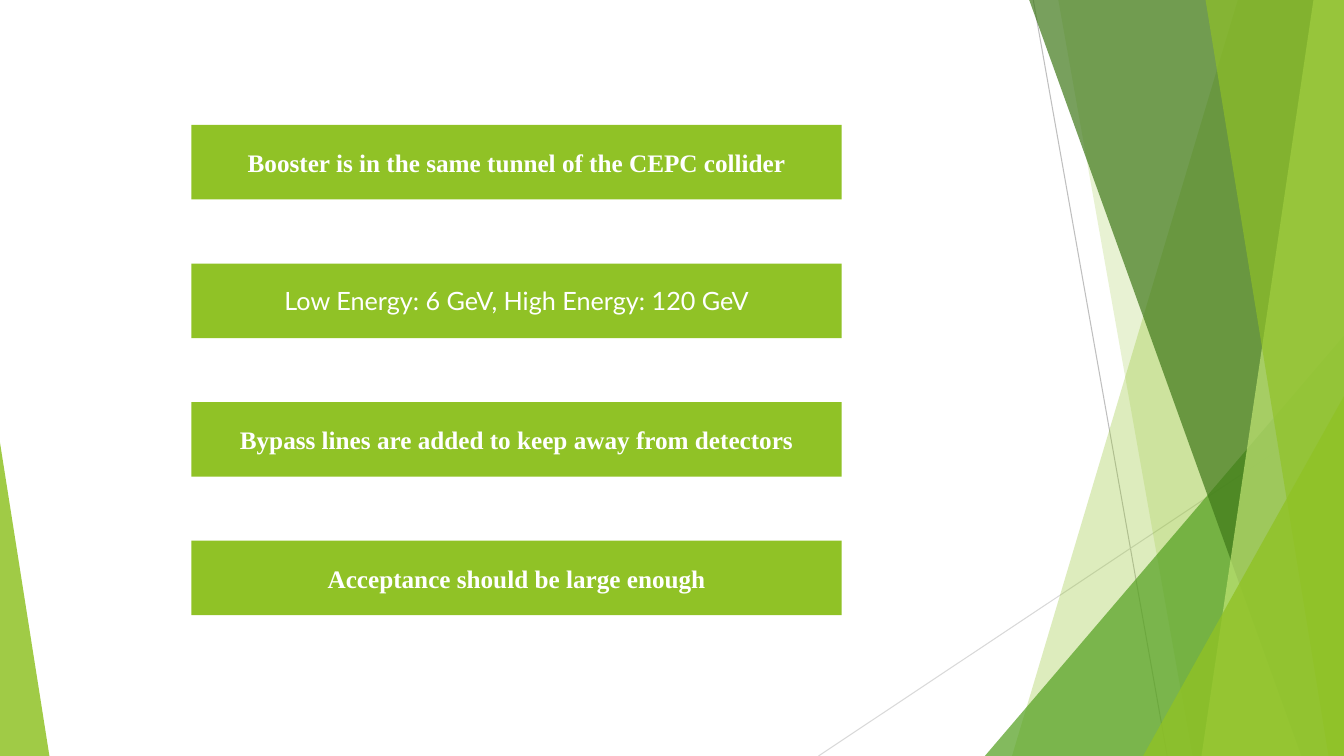
from dataclasses import dataclass

from lxml import etree
from pptx import Presentation
from pptx.dml.color import RGBColor
from pptx.enum.shapes import MSO_CONNECTOR, MSO_SHAPE
from pptx.enum.text import MSO_ANCHOR, PP_ALIGN
from pptx.oxml.ns import qn
from pptx.shapes.autoshape import Shape
from pptx.util import Inches, Pt

RECT, WEDGE = MSO_SHAPE.RECTANGLE, MSO_SHAPE.ISOSCELES_TRIANGLE
STRAIGHT = MSO_CONNECTOR.STRAIGHT
MIDDLE, CENTER = MSO_ANCHOR.MIDDLE, PP_ALIGN.CENTER

WIDE, HIGH = Inches(13.333), Inches(7.5)
COLORS = {
    "lime": "90C226", "green": "54A021", "dark": "3F7819", "pale": "C0E474",
    "gray": "BFBFBF", "mist": "D9D9D9", "white": "FFFFFF",
}
SERIF = {"name": "Times New Roman", "size": Pt(18), "bold": True}
SANS = {"name": "Lato", "size": Pt(18), "bold": False}

# Bar stack, in percent of the slide
BAR_LEFT, BAR_TOP, BAR_WIDE, BAR_HIGH, BAR_STEP = 14.25, 16.53, 48.38, 9.87, 18.33


# All lengths below are percent of the slide's width or height
@dataclass(frozen=True)
class Ray:
    start: tuple[float, float]
    end: tuple[float, float]
    color: str


@dataclass(frozen=True)
class Band:
    """Facet from a slanted left edge to the right side of the slide."""
    head: float
    foot: float
    color: str
    alpha: int


@dataclass(frozen=True)
class Peak:
    """Right triangle that stands on the bottom of the slide."""
    left: float
    top: float
    width: float
    tip: int
    color: str
    alpha: int


@dataclass(frozen=True)
class Bar:
    text: str
    font: dict


RAYS = [
    Ray((76.88, 0), (86.85, 100), "gray"),
    Ray((100, 53.73), (60.9, 100), "mist"),
]
FACETS = [
    Band(92.1, 75.3, "lime", 30),
    Band(78.75, 88.73, "lime", 20),
    Peak(73.28, 44.4, 26.72, 1, "green", 72),
    Band(76.58, 96.83, "dark", 70),
    Band(97.73, 89.4, "pale", 70),
    Band(89.7, 98.85, "lime", 65),
    Peak(85.05, 52.4, 14.95, 1, "lime", 80),
    Peak(0, 58.53, 3.68, 0, "lime", 85),
]
BARS = [
    Bar("Booster is in the same tunnel of the CEPC collider", SERIF),
    Bar("Low Energy: 6 GeV, High Energy: 120 GeV", SANS),
    Bar("Bypass lines are added to keep away from detectors", SERIF),
    Bar("Acceptance should be large enough", SERIF),
]


def across(share: float) -> int:
    return round(WIDE * share / 100)


def down(share: float) -> int:
    return round(HIGH * share / 100)


def rgb(name: str) -> RGBColor:
    return RGBColor.from_string(COLORS[name])


def paint(shape: Shape, color: str, alpha: int = 100) -> None:
    shape.shadow.inherit = False
    shape.line.fill.background()
    shape.fill.solid()
    shape.fill.fore_color.rgb = rgb(color)
    if alpha < 100:
        tint = shape.fill._xPr.find(".//" + qn("a:srgbClr"))
        etree.SubElement(tint, qn("a:alpha"), val=str(alpha * 1000))


def draw_ray(shapes, ray: Ray) -> None:
    (x1, y1), (x2, y2) = ray.start, ray.end
    line = shapes.add_connector(STRAIGHT, across(x1), down(y1), across(x2), down(y2))
    line.line.color.rgb = rgb(ray.color)
    line.line.width = Pt(0.75)
    etree.SubElement(line._element.spPr, qn("a:effectLst"))


def draw_facet(shapes, facet: Band | Peak) -> None:
    if isinstance(facet, Band):
        pen = shapes.build_freeform(across(facet.head), 0)
        pen.add_line_segments([(WIDE, 0), (WIDE, HIGH), (across(facet.foot), HIGH)])
        shape = pen.convert_to_shape()
    else:
        shape = shapes.add_shape(WEDGE, across(facet.left), down(facet.top),
                                 across(facet.width), down(100 - facet.top))
        shape.adjustments[0] = facet.tip
    paint(shape, facet.color, facet.alpha)


def draw_bar(shapes, bar: Bar, row: int) -> None:
    shape = shapes.add_shape(RECT, across(BAR_LEFT), down(BAR_TOP + row * BAR_STEP),
                             across(BAR_WIDE), down(BAR_HIGH))
    paint(shape, "lime")
    frame = shape.text_frame
    frame.word_wrap = True
    frame.vertical_anchor = MIDDLE
    par = frame.paragraphs[0]
    par.alignment = CENTER
    run = par.add_run()
    run.text = bar.text
    for key, value in bar.font.items():
        setattr(run.font, key, value)
    run.font.color.rgb = rgb("white")


def main() -> None:
    deck = Presentation()
    deck.slide_width, deck.slide_height = WIDE, HIGH
    slide = deck.slides.add_slide(deck.slide_layouts[6])
    fill = slide.background.fill
    fill.solid()
    fill.fore_color.rgb = rgb("white")

    # Backdrop
    for ray in RAYS:
        draw_ray(slide.shapes, ray)
    for facet in FACETS:
        draw_facet(slide.shapes, facet)

    # Statements
    for row, bar in enumerate(BARS):
        draw_bar(slide.shapes, bar, row)

    deck.save("out.pptx")


if __name__ == "__main__":
    main()
